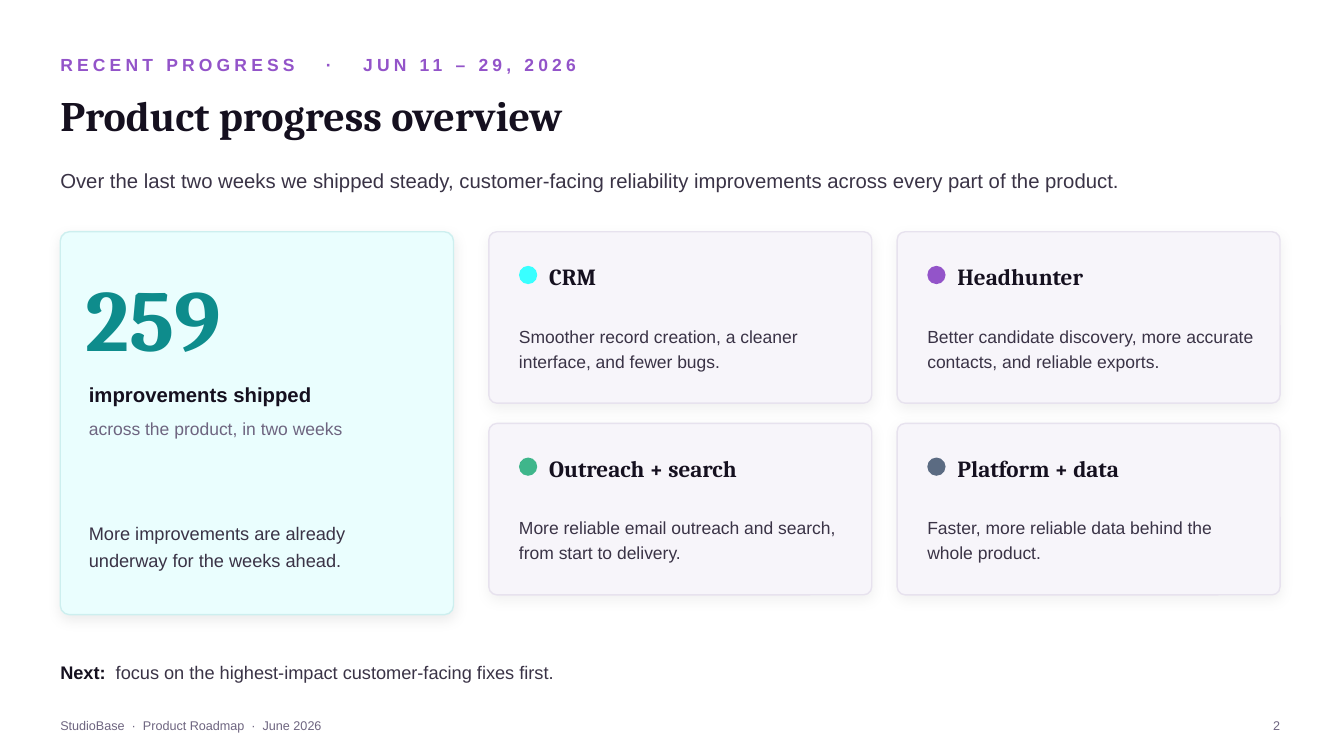
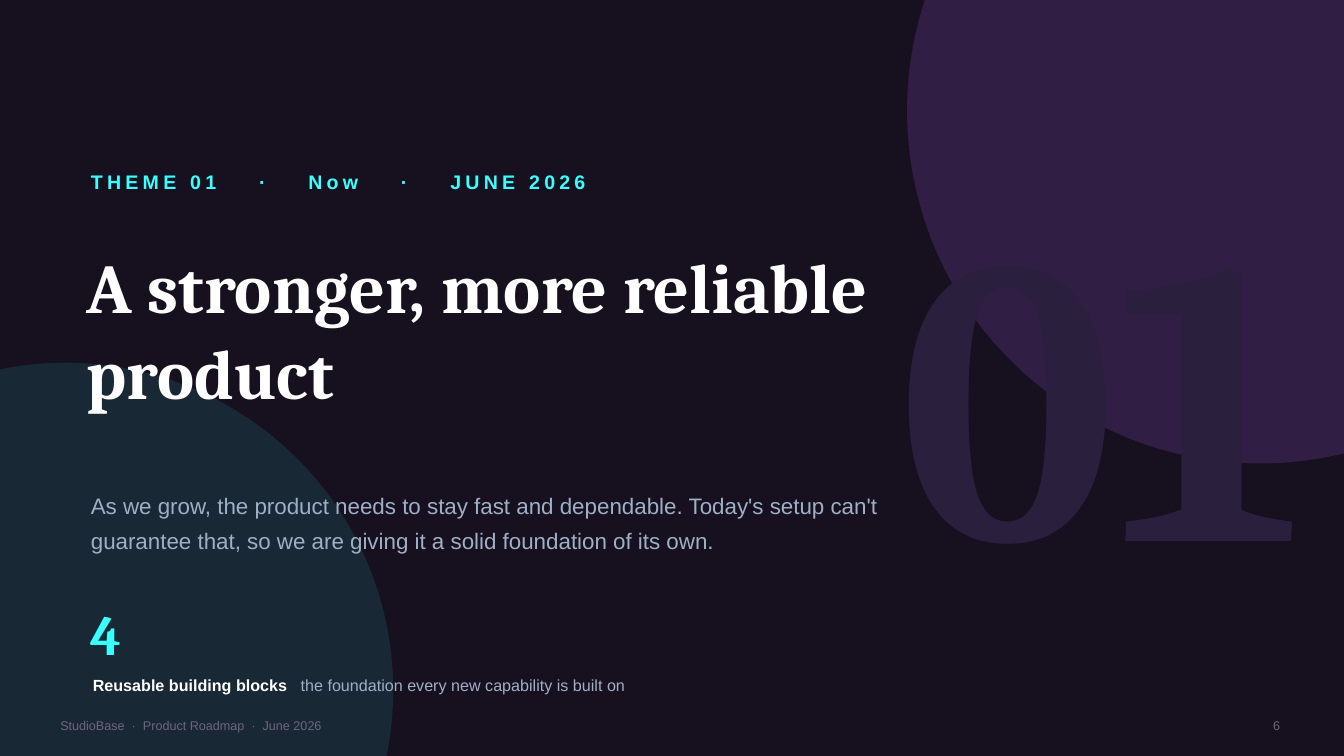
from lxml import etree
from pptx import Presentation
from pptx.dml.color import RGBColor
from pptx.enum.shapes import MSO_SHAPE
from pptx.enum.text import MSO_ANCHOR, MSO_AUTO_SIZE, PP_ALIGN
from pptx.oxml.ns import qn
from pptx.util import Cm, Pt

ROUNDED, OVAL = MSO_SHAPE.ROUNDED_RECTANGLE, MSO_SHAPE.OVAL
LEFT, CENTER, RIGHT = PP_ALIGN.LEFT, PP_ALIGN.CENTER, PP_ALIGN.RIGHT
MIDDLE = MSO_ANCHOR.MIDDLE
NO_AUTOFIT = MSO_AUTO_SIZE.NONE

BODY, SERIF = "Arial", "Cambria"
WHITE = RGBColor(0xFF, 0xFF, 0xFF)
BLACK = RGBColor(0x00, 0x00, 0x00)
NIGHT = RGBColor(0x16, 0x10, 0x1F)
INK = RGBColor(0x15, 0x10, 0x1F)
TEXT = RGBColor(0x3A, 0x33, 0x46)
MUTED = RGBColor(0x6E, 0x65, 0x80)
MIST = RGBColor(0x9F, 0xB0, 0xC6)
PURPLE = RGBColor(0x93, 0x54, 0xC9)
CYAN = RGBColor(0x39, 0xFF, 0xFF)
GREEN = RGBColor(0x3F, 0xB6, 0x8B)
SLATE = RGBColor(0x5B, 0x6B, 0x82)
TEAL = RGBColor(0x0E, 0x8C, 0x8C)
ICE = RGBColor(0xEA, 0xFE, 0xFE)
ICE_EDGE = RGBColor(0xCD, 0xEF, 0xEF)
LILAC = RGBColor(0xF7, 0xF5, 0xFA)
LILAC_EDGE = RGBColor(0xE7, 0xE2, 0xEE)
DUSK = RGBColor(0x2A, 0x20, 0x3D)

MARGIN = 1.52
CONTENT_WIDTH = 30.73
CARDS_TOP = 5.84


def write(slide, at, runs, size, font=BODY, spacing=1.0, tracking=0, align=LEFT, title=False):
    left, top, width, height = (Cm(value) for value in at)
    if title:
        box = slide.shapes.title
        box.left, box.top, box.width, box.height = left, top, width, height
        slide.shapes._spTree.append(box._element)
    else:
        box = slide.shapes.add_textbox(left, top, width, height)
    frame = box.text_frame
    frame.word_wrap = True
    frame.auto_size = NO_AUTOFIT
    frame.vertical_anchor = MIDDLE
    frame.margin_left = frame.margin_top = frame.margin_right = frame.margin_bottom = 0
    paragraph = frame.paragraphs[0]
    paragraph.alignment = align
    paragraph.line_spacing = spacing
    for words, color, bold in runs:
        run = paragraph.add_run()
        run.text = words
        run.font.name = font
        run.font.size = Pt(size)
        run.font.bold = bold
        run.font.color.rgb = color
        if tracking:
            run._r.get_or_add_rPr().set("spc", str(tracking * 100))


def draw(slide, kind, at, fill, edge=None, opacity=None, corner=None, shadow=None):
    shape = slide.shapes.add_shape(kind, *(Cm(value) for value in at))
    shape.shadow.inherit = False
    shape.fill.solid()
    shape.fill.fore_color.rgb = fill
    properties = shape._element.spPr
    if opacity:
        color = properties.find(qn("a:solidFill")).find(qn("a:srgbClr"))
        etree.SubElement(color, qn("a:alpha"), val=str(opacity * 1000))
    if edge:
        shape.line.color.rgb = edge
        shape.line.width = Pt(1)
    else:
        shape.line.fill.background()
    if corner:
        shape.adjustments[0] = corner
    if shadow:
        outer = etree.SubElement(
            properties.find(qn("a:effectLst")), qn("a:outerShdw"),
            blurRad=str(Pt(10)), dist=str(Pt(3)), dir="5400000", algn="bl", rotWithShape="0")
        color = etree.SubElement(outer, qn("a:srgbClr"), val=str(BLACK))
        etree.SubElement(color, qn("a:alpha"), val=str(shadow * 1000))


deck = Presentation()
deck.slide_width, deck.slide_height = Cm(33.87), Cm(19.05)
title_only = deck.slide_layouts[5]
overview, theme = (deck.slides.add_slide(title_only) for _ in range(2))

write(overview, (MARGIN, 1.17, 27.94, 0.89),
      [("RECENT PROGRESS   ·   JUN 11 – 29, 2026", PURPLE, True)], 12.5, tracking=3)
write(overview, (MARGIN, 2.13, CONTENT_WIDTH, 1.52),
      [("Product progress overview", INK, True)], 30, SERIF, title=True)
write(overview, (MARGIN, 3.86, CONTENT_WIDTH, 1.27),
      [("Over the last two weeks we shipped steady, customer-facing reliability "
        "improvements across every part of the product.", TEXT, False)], 14.5, spacing=1.2)

draw(overview, ROUNDED, (MARGIN, CARDS_TOP, 9.91, 9.65), ICE, ICE_EDGE, corner=0.024, shadow=8)
write(overview, (2.16, 6.65, 8.64, 2.67), [("259", TEAL, True)], 62, SERIF)
write(overview, (2.24, 9.5, 8.64, 0.89), [("improvements shipped", INK, True)], 14.5)
write(overview, (2.24, 10.36, 8.64, 0.89),
      [("across the product, in two weeks", MUTED, False)], 12.5)
write(overview, (2.24, 12.57, 8.51, 2.29),
      [("More improvements are already underway for the weeks ahead.", TEXT, False)],
      13, spacing=1.25)

areas = [
    ("CRM", CYAN, "Smoother record creation, a cleaner interface, and fewer bugs."),
    ("Headhunter", PURPLE,
     "Better candidate discovery, more accurate contacts, and reliable exports."),
    ("Outreach + search", GREEN,
     "More reliable email outreach and search, from start to delivery."),
    ("Platform + data", SLATE, "Faster, more reliable data behind the whole product."),
]
for index, (area, accent, summary) in enumerate(areas):
    row, column = divmod(index, 2)
    left = 12.32 + column * 10.29
    top = CARDS_TOP + row * 4.83
    draw(overview, ROUNDED, (left, top, 9.65, 4.32), LILAC, LILAC_EDGE, corner=0.047, shadow=6)
    draw(overview, OVAL, (left + 0.76, top + 0.86, 0.46, 0.46), accent)
    write(overview, (left + 1.52, top + 0.61, 7.62, 1.02), [(area, INK, True)], 16.5, SERIF)
    write(overview, (left + 0.76, top + 1.88, 8.26, 2.03),
          [(summary, TEXT, False)], 12.5, spacing=1.2)

write(overview, (MARGIN, 16.26, CONTENT_WIDTH, 1.27),
      [("Next:  ", INK, True),
       ("focus on the highest-impact customer-facing fixes first.", TEXT, False)],
      13, spacing=1.15)

draw(theme, OVAL, (22.86, -6.1, 17.78, 17.78), PURPLE, opacity=22)
draw(theme, OVAL, (-6.6, 9.14, 16.51, 16.51), CYAN, opacity=10)
write(theme, (21.8, 4.98, 11.9, 9.14), [("01", DUSK, True)], 290, SERIF, align=CENTER)
write(theme, (2.29, 4.06, 25.4, 1.02),
      [("THEME 01    ·    Now    ·    JUNE 2026", CYAN, True)], 14, tracking=3)
write(theme, (2.18, 5.72, 21.34, 5.08),
      [("A stronger, more reliable product", WHITE, True)], 50, SERIF, spacing=1.02, title=True)
write(theme, (2.29, 11.43, 21.59, 3.3),
      [("As we grow, the product needs to stay fast and dependable. Today's setup can't "
        "guarantee that, so we are giving it a solid foundation of its own.", MIST, False)],
      16, spacing=1.3)
write(theme, (2.29, 15.04, 10.16, 1.83), [("4", CYAN, True)], 40, SERIF)
write(theme, (2.34, 16.81, 29.21, 0.89),
      [("Reusable building blocks   ", WHITE, True),
       ("the foundation every new capability is built on", MIST, False)], 11.5)

for slide, backdrop, number in [(overview, WHITE, "2"), (theme, NIGHT, "6")]:
    slide.background.fill.solid()
    slide.background.fill.fore_color.rgb = backdrop
    write(slide, (MARGIN, 17.91, 20.32, 0.76),
          [("StudioBase  ·  Product Roadmap  ·  June 2026", MUTED, False)], 9)
    write(slide, (31.24, 17.91, 1.02, 0.76), [(number, MUTED, False)], 9, align=RIGHT)

deck.save("out.pptx")
